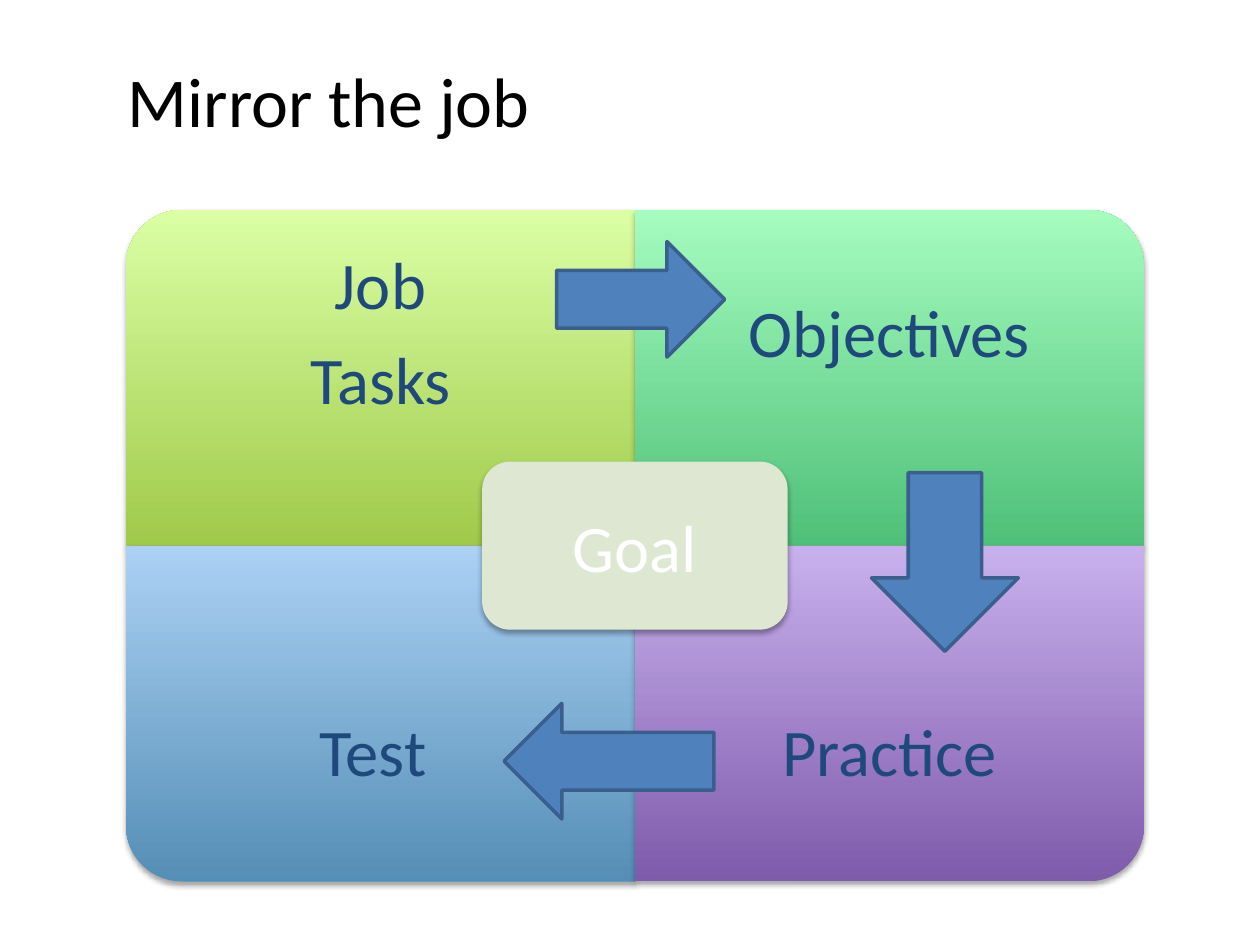
"""Build the "Mirror the job" slide: a four-part matrix around a goal, joined by arrows."""
from dataclasses import dataclass

from lxml import etree
from pptx import Presentation
from pptx import util as u
from pptx.dml.color import RGBColor
from pptx.enum import shapes, text
from pptx.oxml import ns


@dataclass(frozen=True)
class Theme:
    font: str = "Calibri"
    title_size: float = 40
    label_size: float = 38
    title: str = "000000"
    label: str = "1F497D"
    goal_label: str = "FFFFFF"
    goal_fill: str = "DEE7D1"
    arrow_fill: str = "4F81BD"
    arrow_line: str = "3A5F8C"
    green: tuple = ("A0CA4A", "DAFFA5")
    mint: tuple = ("4FC079", "A5FCBE")
    blue: tuple = ("558EB6", "ABD1F4")
    purple: tuple = ("7F5BAB", "C8B0ED")


theme = Theme()


def write(box, lines, size, color, align):
    frame = box.text_frame
    frame.word_wrap = True
    frame.vertical_anchor = text.MSO_ANCHOR.MIDDLE
    frame.text = lines
    for para in frame.paragraphs:
        para.alignment = align
        for span in para.runs:
            span.font.name = theme.font
            span.font.size = u.Pt(size)
            span.font.color.rgb = RGBColor.from_string(color)


def cast_shadow(shape):
    shape.shadow.inherit = False
    effects = shape._element.spPr.find(ns.qn("a:effectLst"))
    shadow = etree.SubElement(
        effects, ns.qn("a:outerShdw"), blurRad=str(u.Pt(3.1)), dist=str(u.Pt(1.8)),
        dir="5400000", rotWithShape="0")
    color = etree.SubElement(shadow, ns.qn("a:srgbClr"), val="000000")
    etree.SubElement(color, ns.qn("a:alpha"), val="35000")


deck = Presentation()
deck.slide_width, deck.slide_height = u.Cm(25.4), u.Cm(19.05)
page = deck.slides.add_slide(deck.slide_layouts[6])

title = page.shapes.add_textbox(u.Cm(2.33), u.Cm(0.42), u.Cm(23.07), u.Cm(3.18))
write(title, "Mirror the job", theme.title_size, theme.title, text.PP_ALIGN.LEFT)

center_x, center_y = 12.8, 11
tile_width, tile_height, label_height = 10.26, 6.77, 5.08
tiles = [
    ("Job\nTasks", 0, 0, 270, theme.green),
    ("Objectives", 1, 0, 0, theme.mint),
    ("Test ", 0, 1, 180, theme.blue),
    ("Practice", 1, 1, 90, theme.purple),
]
for label, column, row, rotation, gradient in tiles:
    left = center_x + (column - 1) * tile_width
    top = center_y + (row - 1) * tile_height
    width, height = tile_width, tile_height
    if rotation % 180:
        width, height = height, width
    tile = page.shapes.add_shape(
        shapes.MSO_SHAPE.ROUND_1_RECTANGLE,
        u.Cm(left + (tile_width - width) / 2), u.Cm(top + (tile_height - height) / 2),
        u.Cm(width), u.Cm(height))
    tile.rotation = rotation
    tile.fill.gradient()
    tile.fill.gradient_angle = 90
    for stop, color, position in zip(tile.fill.gradient_stops, gradient, (0, 1)):
        stop.color.rgb = RGBColor.from_string(color)
        stop.position = position
    tile._element.spPr.find(ns.qn("a:gradFill")).set("rotWithShape", "0")
    tile.line.fill.background()
    cast_shadow(tile)

    box = page.shapes.add_textbox(
        u.Cm(left), u.Cm(top + row * (tile_height - label_height)),
        u.Cm(tile_width), u.Cm(label_height))
    write(box, label, theme.label_size, theme.label, text.PP_ALIGN.CENTER)
    frame = box.text_frame
    frame.margin_left = frame.margin_right = u.Cm(0.75)
    frame.margin_top = frame.margin_bottom = u.Cm(0.75)
    for para in frame.paragraphs:
        para.line_spacing = 0.9
        para.space_after = u.Pt(0.35 * theme.label_size)

goal_width, goal_height = 6.16, 3.39
goal = page.shapes.add_shape(
    shapes.MSO_SHAPE.ROUNDED_RECTANGLE,
    u.Cm(center_x - goal_width / 2), u.Cm(center_y - goal_height / 2),
    u.Cm(goal_width), u.Cm(goal_height))
goal.fill.solid()
goal.fill.fore_color.rgb = RGBColor.from_string(theme.goal_fill)
goal.line.fill.background()
cast_shadow(goal)
write(goal, "Goal", theme.label_size, theme.goal_label, text.PP_ALIGN.CENTER)

arrows = [
    (shapes.MSO_SHAPE.RIGHT_ARROW, 11.22, 4.87, 3.39, 2.33, 0),
    (shapes.MSO_SHAPE.DOWN_ARROW, 17.57, 9.53, 2.96, 3.6, 0),
    (shapes.MSO_SHAPE.RIGHT_ARROW, 10.16, 14.18, 4.23, 2.33, 180),
]
for kind, left, top, width, height, rotation in arrows:
    arrow = page.shapes.add_shape(kind, u.Cm(left), u.Cm(top), u.Cm(width), u.Cm(height))
    arrow.rotation = rotation
    arrow.shadow.inherit = False
    arrow.fill.solid()
    arrow.fill.fore_color.rgb = RGBColor.from_string(theme.arrow_fill)
    arrow.line.color.rgb = RGBColor.from_string(theme.arrow_line)
    arrow.line.width = u.Pt(2)

deck.save("out.pptx")
